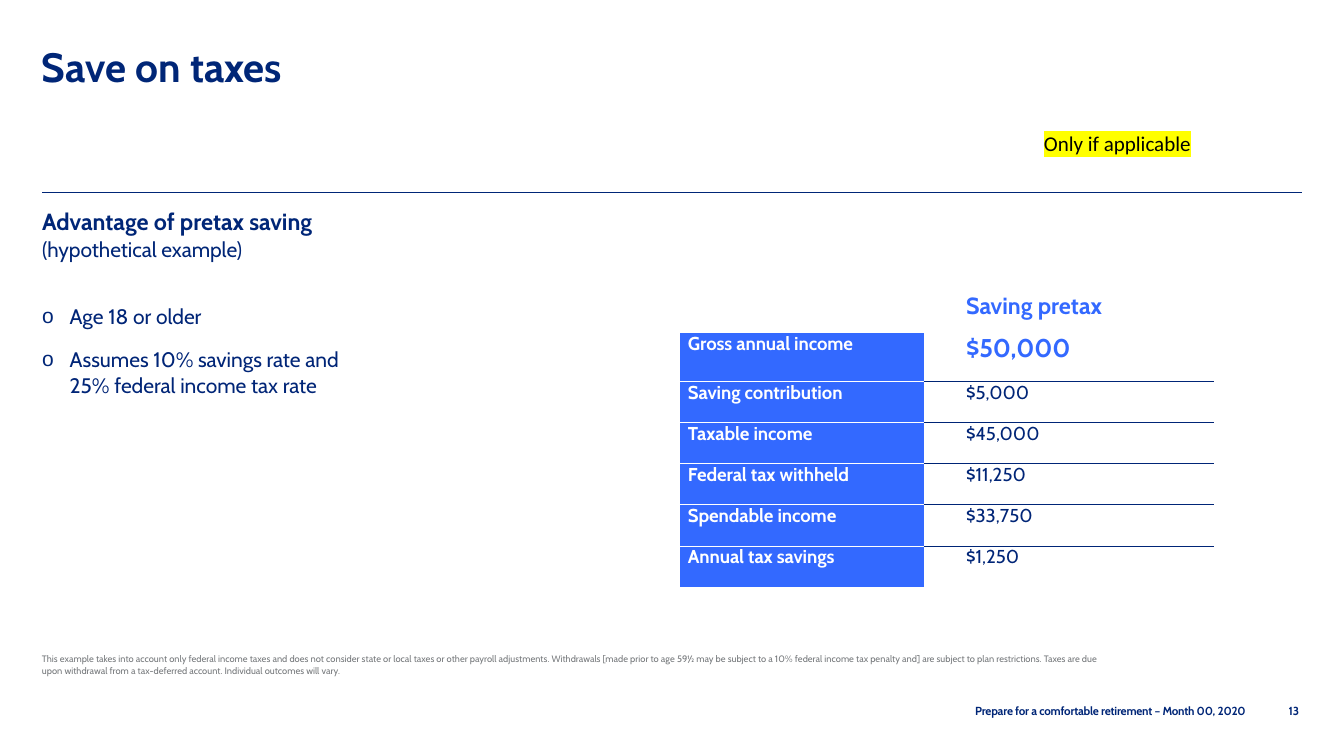
import pptx
import pptx.util
import pptx.dml.color
import pptx.enum.shapes
import pptx.oxml
import pptx.oxml.ns
import lxml.etree

NAVY = pptx.dml.color.RGBColor(0x00, 0x26, 0x77)
TABLE_NAVY = pptx.dml.color.RGBColor(0x00, 0x25, 0x77)
BLUE = pptx.dml.color.RGBColor(0x33, 0x69, 0xFF)
GREY = pptx.dml.color.RGBColor(0x75, 0x78, 0x7B)
BLACK = pptx.dml.color.RGBColor(0x00, 0x00, 0x00)
WHITE = pptx.dml.color.RGBColor(0xFF, 0xFF, 0xFF)
qn = pptx.oxml.ns.qn

presentation = pptx.Presentation()
presentation.slide_width = pptx.util.Inches(16)
presentation.slide_height = pptx.util.Inches(9)
slide = presentation.slides.add_slide(presentation.slide_layouts[6])
COLUMN = presentation.slide_width // 16
ROW = presentation.slide_height // 9
LEFT = 0.5


def style(paragraph, size, color, bold=False, name="Cabin", spacing=0):
    font = paragraph.font
    font.size = pptx.util.Pt(size)
    font.name = name
    font.bold = bold
    font.color.rgb = color
    if spacing:
        for run in paragraph.runs:
            run.font._element.set("spc", str(spacing))


def add_text(left, top, width, height, text, inset=0):
    shape = slide.shapes.add_textbox(
        int(left * COLUMN), int(top * ROW), int(width * COLUMN), int(height * ROW))
    frame = shape.text_frame
    frame.word_wrap = True
    if not inset:
        frame.margin_left = frame.margin_right = 0
        frame.margin_top = frame.margin_bottom = 0
    frame.text = text
    return frame.paragraphs


title = add_text(LEFT, 0.5, 15, 0.51, "Save on taxes")[0]
style(title, 35, NAVY, True)

rule = slide.shapes.add_connector(
    pptx.enum.shapes.MSO_CONNECTOR.STRAIGHT,
    int(LEFT * COLUMN), int(2.29 * ROW), int(15.5 * COLUMN), int(2.29 * ROW))
rule.line.color.rgb = NAVY
rule.line.width = pptx.util.Pt(0.5)
lxml.etree.SubElement(rule._element.spPr, qn("a:effectLst"))

heading, subheading, *bullets = add_text(
    LEFT, 2.47, 3.72, 2.22,
    "Advantage of pretax saving\n(hypothetical example)\n"
    "Age 18 or older\nAssumes 10% savings rate and 25% federal income tax rate")
style(heading, 20, NAVY, True, spacing=-4)
subheading.space_before = pptx.util.Pt(1)
style(subheading, 18, NAVY, spacing=-6)
for bullet, gap in zip(bullets, (35.7, 14.8)):
    properties = bullet._p.get_or_add_pPr()
    properties.set("marL", str(int(0.33 * COLUMN)))
    properties.set("indent", str(int(-0.33 * COLUMN)))
    color = lxml.etree.SubElement(properties, qn("a:buClr"))
    lxml.etree.SubElement(color, qn("a:srgbClr")).set("val", str(NAVY))
    lxml.etree.SubElement(properties, qn("a:buFont")).set("typeface", "Arial")
    lxml.etree.SubElement(properties, qn("a:buChar")).set("char", "o")
    bullet.space_before = pptx.util.Pt(gap)
    style(bullet, 18, TABLE_NAVY, spacing=-4)
bullets[-1].line_spacing = 1.02

note = add_text(12.33, 1.5, 2.92, 0.4, "Only if applicable", inset=True)[0]
style(note, 18, BLACK, name="Calibri")
highlight = lxml.etree.SubElement(note.runs[0].font._element, qn("a:highlight"))
lxml.etree.SubElement(highlight, qn("a:srgbClr")).set("val", "FFFF00")

rows = [
    ("Saving pretax", ""),
    ("Gross annual income", "$50,000"),
    ("Saving contribution", "$5,000"),
    ("Taxable income", "$45,000"),
    ("Federal tax withheld", "$11,250"),
    ("Spendable income", "$33,750"),
    ("Annual tax savings", "$1,250"),
]
row_heights = [0.48, 0.58] + [0.49] * 5
column_widths = [2.91, 3.28]
table = slide.shapes.add_table(
    len(rows), 2, int(8.09 * COLUMN), int(3.48 * ROW),
    int(sum(column_widths) * COLUMN), int(sum(row_heights) * ROW)).table
table.first_row = table.horz_banding = False
for index, width in enumerate(column_widths):
    table.columns[index].width = int(width * COLUMN)
for index, height in enumerate(row_heights):
    table.rows[index].height = int(height * ROW)
table.cell(0, 0).merge(table.cell(0, 1))

for row_index, texts in enumerate(rows):
    for column_index, text in enumerate(texts):
        cell = table.cell(row_index, column_index)
        header = row_index == 0
        label = column_index == 0 and not header
        cell.margin_right = cell.margin_top = cell.margin_bottom = 0
        cell.margin_left = int((3.41 if header else 0.1 if label else 0.5) * COLUMN)
        inner = WHITE if label else TABLE_NAVY
        last = row_index == len(rows) - 1
        borders = {"L": WHITE, "R": WHITE, "T": WHITE if header else inner}
        if not header:
            borders["B"] = WHITE if last else inner
        for side, border_color in borders.items():
            line = lxml.etree.SubElement(cell._tc.get_or_add_tcPr(), qn("a:ln" + side))
            line.set("w", str(pptx.util.Pt(0.5)))
            fill = lxml.etree.SubElement(line, qn("a:solidFill"))
            lxml.etree.SubElement(fill, qn("a:srgbClr")).set("val", str(border_color))
        if label:
            cell.fill.solid()
            cell.fill.fore_color.rgb = BLUE
        else:
            cell.fill.background()
        if not text:
            continue
        cell.text = text
        paragraph = cell.text_frame.paragraphs[0]
        if header:
            style(paragraph, 20, BLUE, True)
        elif label:
            style(paragraph, 16, WHITE, True, spacing=-5)
        elif row_index == 1:
            style(paragraph, 22, BLUE, True, spacing=-8)
        else:
            style(paragraph, 16, TABLE_NAVY)

disclaimer = add_text(
    LEFT, 7.77, 12.63, 0.28,
    "This example takes into account only federal income taxes and does not consider "
    "state or local taxes or other payroll adjustments. Withdrawals [made prior to age "
    "59½ may be subject to a 10% federal income tax penalty and] are subject to plan "
    "restrictions. Taxes are due upon withdrawal from a tax-deferred account. "
    "Individual outcomes will vary.")[0]
disclaimer.line_spacing = 1.05
style(disclaimer, 8, GREY)

footer = add_text(11.61, 8.38, 3.5, 0.17,
                  "Prepare for a comfortable retirement – Month 00, 2020")[0]
style(footer, 10, NAVY, True, spacing=-16)
page_number = add_text(15.34, 8.38, 0.21, 0.17, "13")[0]
style(page_number, 10, NAVY, True)

presentation.save("out.pptx")
